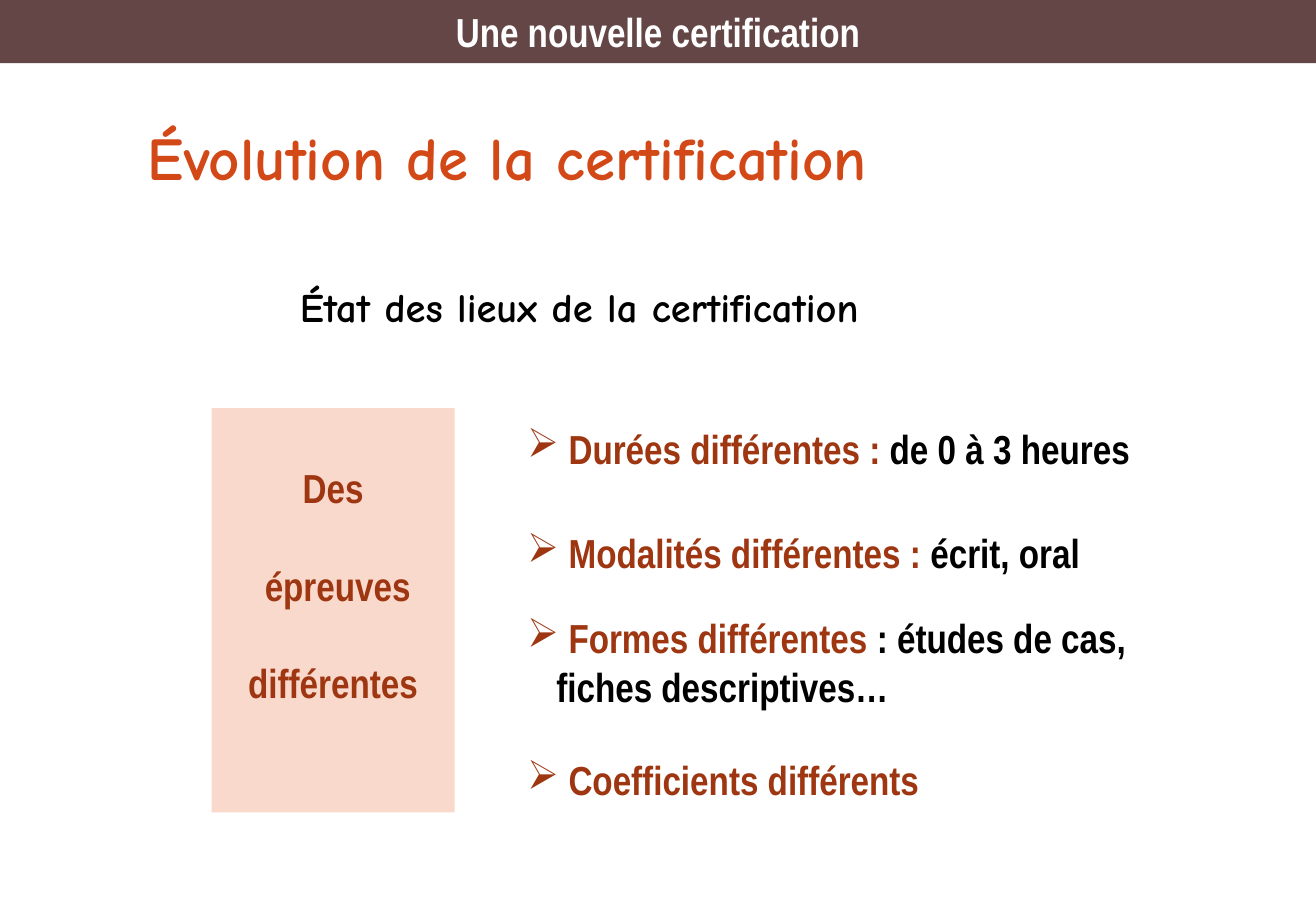
from lxml import etree
from pptx import Presentation
from pptx import util as u
from pptx.dml.color import RGBColor
from pptx.enum import shapes, text
from pptx.oxml import ns

WIDE, HIGH = u.Inches(10.83), u.Inches(7.5)
COL, ROW = WIDE / 100, HIGH / 100
ORANGE = RGBColor(0xD3, 0x48, 0x17)
RUST = RGBColor(0x9E, 0x36, 0x11)
PEACH = RGBColor(0xFA, 0xD9, 0xCD)
BROWN = RGBColor(0x64, 0x46, 0x46)
BLACK = RGBColor(0, 0, 0)
WHITE = RGBColor(0xFF, 0xFF, 0xFF)
COMIC = {"name": "Comic Neue", "bold": True}
NARROW = {"name": "Arial Narrow", "bold": True, "size": u.Pt(24)}
LINE = u.Pt(29)

POINTS = [
    (45.87, 52.17, 6.8, " Durées différentes : ", "de 0 à 3 heures"),
    (57.33, 45.06, 6.8, " Modalités différentes : ", "écrit, oral"),
    (66.67, 50.51, 12.13, " Formes différentes ",
     ": études de cas, fiches descriptives…"),
    (82.27, 32.69, 6.8, " Coefficients différents", ""),
]


def place(left, top, width, height):
    return [round(n) for n in
            (left * COL, top * ROW, width * COL, height * ROW)]


def style(item, form):
    for key, value in form.items():
        setattr(item, key, value)


def write(para, words, form, color):
    run = para.add_run()
    run.text = words
    style(run.font, form)
    run.font.color.rgb = color


def label(slide, area):
    frame = slide.shapes.add_textbox(*place(*area)).text_frame
    frame.word_wrap = True
    return frame.paragraphs[0]


def panel(slide, area, fill, anchor):
    box = slide.shapes.add_shape(shapes.MSO_SHAPE.RECTANGLE, *place(*area))
    box.shadow.inherit = False
    box.fill.solid()
    box.fill.fore_color.rgb = fill
    box.line.fill.background()
    style(box.text_frame, {"word_wrap": True, "vertical_anchor": anchor})
    return box.text_frame


def stack(frame, lines, color, gap=0):
    for i, words in enumerate(lines):
        para = frame.add_paragraph() if i else frame.paragraphs[0]
        para.alignment = text.PP_ALIGN.CENTER
        if i:
            para.space_before = gap
        write(para, words, NARROW, color)


def bullet(para):
    props = para._p.get_or_add_pPr()
    hang = u.Inches(0.24)
    props.set("marL", str(hang))
    props.set("indent", str(-hang))
    etree.SubElement(props, ns.qn("a:buChar")).set("char", "➢")


def point(slide, top, width, height, lead, rest):
    para = label(slide, (39.15, top, width, height))
    bullet(para)
    write(para, lead, NARROW, RUST)
    if rest:
        write(para, rest, NARROW, BLACK)


def main():
    deck = Presentation()
    style(deck, {"slide_width": WIDE, "slide_height": HIGH})
    slide = deck.slides.add_slide(deck.slide_layouts[6])

    title = label(slide, (10.34, 12.53, 82.92, 9.47))
    write(title, "Évolution de la certification",
          {**COMIC, "size": u.Pt(36)}, ORANGE)
    topic = label(slide, (21.88, 30.27, 53.19, 6.8))
    write(topic, "État des lieux de la certification",
          {**COMIC, "size": u.Pt(24)}, BLACK)

    tests = panel(slide, (16.07, 44.8, 18.47, 44.4), PEACH,
                  text.MSO_ANCHOR.TOP)
    tests.margin_top = u.Inches(0.05) + LINE
    stack(tests, ["Des", " épreuves", "différentes"], RUST, LINE)

    for row in POINTS:
        point(slide, *row)

    head = panel(slide, (0, 0, 100, 6.93), BROWN, text.MSO_ANCHOR.MIDDLE)
    stack(head, ["Une nouvelle certification"], WHITE)
    deck.save("out.pptx")


if __name__ == "__main__":
    main()
